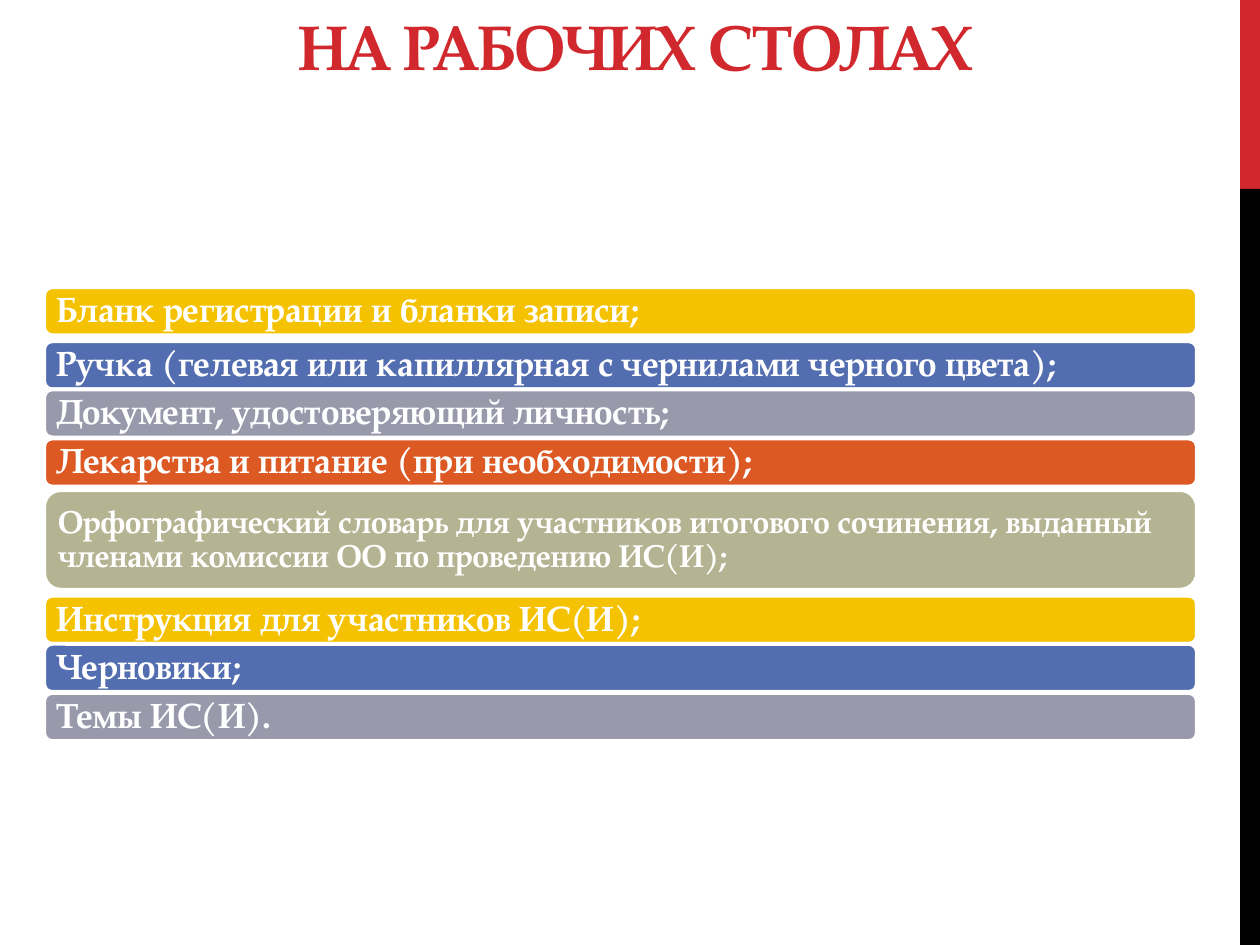
from pptx import Presentation
from pptx.dml.color import RGBColor
from pptx.enum.shapes import MSO_SHAPE as Shape
from pptx.enum.text import MSO_ANCHOR as Anchor, PP_ALIGN as Align
from pptx.util import Cm, Pt

FONT = "TeX Gyre Pagella"
COLOURS = {
    "red": "D1282E", "black": "000000", "white": "FFFFFF", "yellow": "F5C201",
    "blue": "526DB0", "grey": "989AAC", "orange": "DC5924", "olive": "B4B392",
}

# Content: top in cm, colour, wording
TITLE = "НА РАБОЧИХ СТОЛАХ"
ITEMS = [
    (5.79, "yellow", "Бланк регистрации и бланки записи;"),
    (6.88, "blue", "Ручка (гелевая или капиллярная с чернилами черного цвета);"),
    (7.85, "grey", "Документ, удостоверяющий личность;"),
    (8.84, "orange", "Лекарства и питание (при необходимости);"),
    (9.88, "olive", "Орфографический словарь для участников итогового сочинения, "
                    "выданный членами комиссии ОО по проведению ИС(И);"),
    (12.01, "yellow", "Инструкция для участников ИС(И);"),
    (12.98, "blue", "Черновики;"),
    (13.97, "grey", "Темы ИС(И)."),
]
SIDE_BANDS = [(0, 3.81, "red"), (3.81, 15.24, "black")]

BAR_LEFT, BAR_WIDTH = 0.89, 23.24
ONE_LINE = {"height": 0.97, "size": 20, "inset": 0.2}
TWO_LINES = {"height": 2.01, "size": 18, "inset": 0.18}
LINE_LIMIT = 70  # characters that fit on one line


def colour(name):
    return RGBColor.from_string(COLOURS[name])


def add_block(slide, kind, left, top, width, height, fill, line=None):
    shape = slide.shapes.add_shape(kind, Cm(left), Cm(top), Cm(width), Cm(height))
    shape.shadow.inherit = False
    shape.fill.solid()
    shape.fill.fore_color.rgb = colour(fill)
    if line:
        shape.line.color.rgb = colour(line)
        shape.line.width = Pt(2.25)
    else:
        shape.line.fill.background()
    return shape


def write_text(shape, text, *, size, color, align=Align.LEFT, anchor=Anchor.MIDDLE,
               inset=0.25, inset_y=0.0, line_spacing=1.0, tracking=None):
    frame = shape.text_frame
    frame.word_wrap = True
    frame.vertical_anchor = anchor
    frame.margin_left = frame.margin_right = Cm(inset)
    frame.margin_top = frame.margin_bottom = Cm(inset_y)
    paragraph = frame.paragraphs[0]
    paragraph.alignment = align
    paragraph.line_spacing = line_spacing
    run = paragraph.add_run()
    run.text = text
    run.font.name = FONT
    run.font.size = Pt(size)
    run.font.bold = True
    run.font.color.rgb = colour(color)
    if tracking is not None:
        run._r.get_or_add_rPr().set("spc", str(round(tracking * 100)))


def main():
    presentation = Presentation()
    presentation.slide_width, presentation.slide_height = Cm(25.4), Cm(19.05)
    slide = presentation.slides.add_slide(presentation.slide_layouts[6])

    # Bands on the right edge
    for top, height, fill in SIDE_BANDS:
        add_block(slide, Shape.RECTANGLE, 25, top, 0.4, height, fill)

    # List of items as rounded bars
    for top, fill, text in ITEMS:
        style = TWO_LINES if len(text) > LINE_LIMIT else ONE_LINE
        bar = add_block(slide, Shape.ROUNDED_RECTANGLE, BAR_LEFT, top, BAR_WIDTH,
                        style["height"], fill, line="white")
        write_text(bar, text, size=style["size"], color="white",
                   inset=style["inset"], line_spacing=0.9)

    # Title
    title = slide.shapes.add_textbox(Cm(1.3), Cm(-0.69), Cm(23.01), Cm(2.49))
    write_text(title, TITLE, size=36, color="red", align=Align.CENTER,
               anchor=Anchor.BOTTOM, inset_y=0.13, tracking=-0.6)

    presentation.save("out.pptx")


if __name__ == "__main__":
    main()
